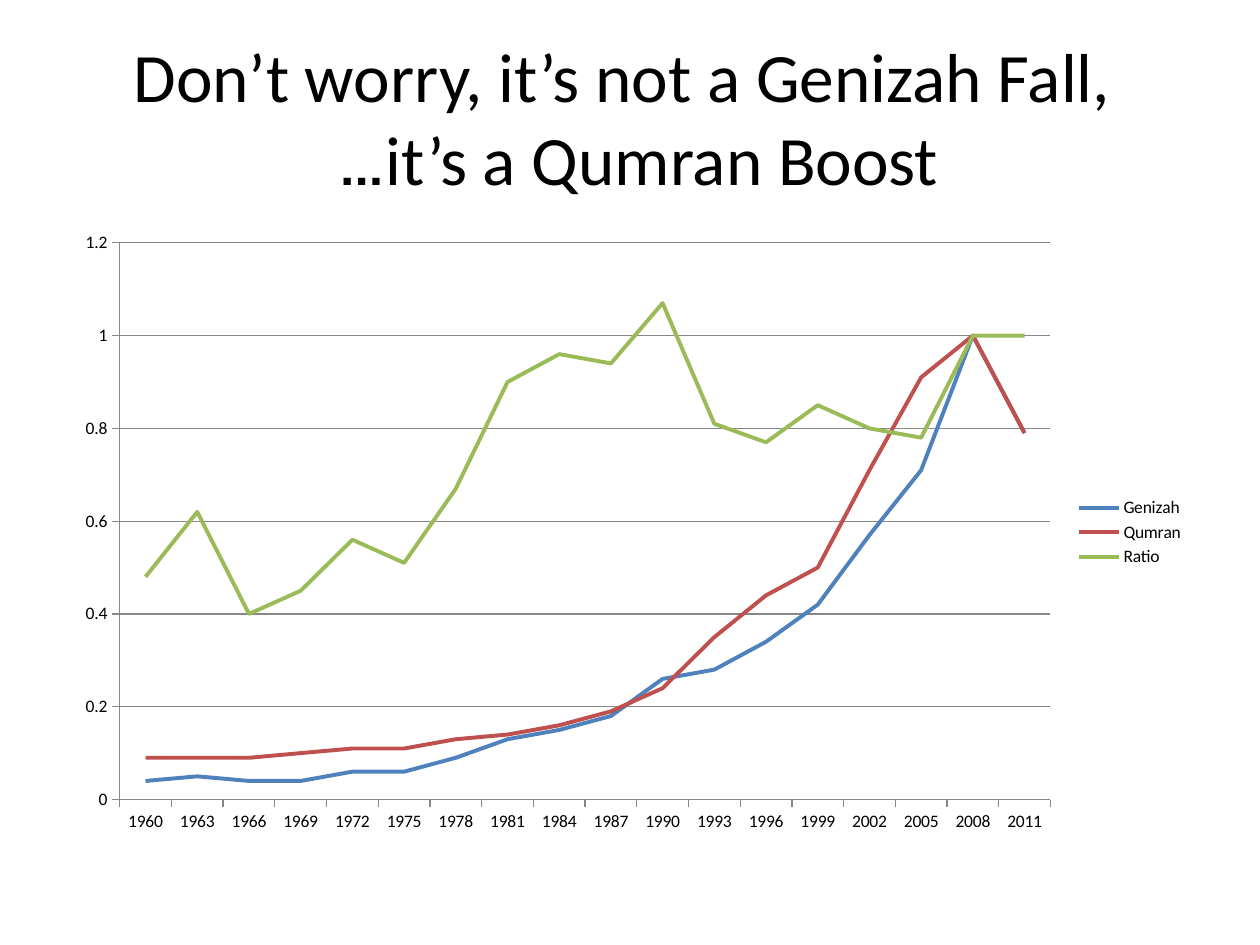
"""Build a slide with a line chart of Genizah, Qumran and their ratio."""
from dataclasses import dataclass

from pptx import Presentation
from pptx.chart import data as chart_data
from pptx.dml.color import RGBColor
from pptx.enum import chart as charts, text
from pptx.util import Inches, Pt


@dataclass(frozen=True)
class Theme:
    font: str = "Calibri"
    ink: str = "000000"
    grid: str = "878787"
    title_size: float = 39.6
    chart_size: float = 10
    series_width: float = 2.25
    grid_width: float = 0.75


@dataclass(frozen=True)
class Series:
    name: str
    color: str
    values: tuple[float, ...]


THEME = Theme()
YEARS = [str(year) for year in range(1960, 2012, 3)]
SERIES = (
    Series("Genizah", "4F81BD", (0.04, 0.05, 0.04, 0.04, 0.06, 0.06, 0.09, 0.13, 0.15,
                                 0.18, 0.26, 0.28, 0.34, 0.42, 0.57, 0.71, 1, 0.79)),
    Series("Qumran", "C0504D", (0.09, 0.09, 0.09, 0.1, 0.11, 0.11, 0.13, 0.14, 0.16,
                                0.19, 0.24, 0.35, 0.44, 0.5, 0.71, 0.91, 1, 0.79)),
    Series("Ratio", "9BBB59", (0.48, 0.62, 0.4, 0.45, 0.56, 0.51, 0.67, 0.9, 0.96,
                               0.94, 1.07, 0.81, 0.77, 0.85, 0.8, 0.78, 1, 1)),
)


def place(shape, left: float, top: float, width: float, height: float) -> None:
    shape.left, shape.top = Inches(left), Inches(top)
    shape.width, shape.height = Inches(width), Inches(height)


def format_font(font, size: float, color: str) -> None:
    font.name, font.size = THEME.font, Pt(size)
    font.color.rgb = RGBColor.from_string(color)


def format_line(line, color: str, width: float) -> None:
    line.color.rgb = RGBColor.from_string(color)
    line.width = Pt(width)


def write_text(shape, content: str, *, size: float, color: str,
               align=text.PP_ALIGN.CENTER, right_to_left: bool = False) -> None:
    frame = shape.text_frame
    frame.word_wrap = True
    frame.auto_size = text.MSO_AUTO_SIZE.NONE
    frame.vertical_anchor = text.MSO_ANCHOR.MIDDLE
    paragraph = frame.paragraphs[0]
    paragraph.text = content
    paragraph.alignment = align
    if right_to_left:
        paragraph._p.get_or_add_pPr().set("rtl", "1")
    format_font(paragraph.font, size, color)
    for run in paragraph.runs:
        format_font(run.font, size, color)


def format_axis(axis) -> None:
    axis.major_tick_mark = charts.XL_TICK_MARK.OUTSIDE
    axis.minor_tick_mark = charts.XL_TICK_MARK.NONE
    format_line(axis.format.line, THEME.grid, THEME.grid_width)


def add_line_chart(slide, series: tuple[Series, ...]) -> None:
    data = chart_data.CategoryChartData()
    data.categories = YEARS
    for item in series:
        data.add_series(item.name, item.values)
    chart = slide.shapes.add_chart(
        charts.XL_CHART_TYPE.LINE, Inches(0.5), Inches(1.75), Inches(9), Inches(4.95), data
    ).chart
    format_font(chart.font, THEME.chart_size, THEME.ink)
    chart.has_title = False
    chart.has_legend = True
    chart.legend.position = charts.XL_LEGEND_POSITION.RIGHT
    chart.legend.include_in_layout = False

    format_axis(chart.category_axis)
    value_axis = chart.value_axis
    format_axis(value_axis)
    value_axis.minimum_scale, value_axis.maximum_scale, value_axis.major_unit = 0, 1.2, 0.2
    value_axis.has_major_gridlines = True
    format_line(value_axis.major_gridlines.format.line, THEME.grid, THEME.grid_width)

    plot = chart.plots[0]
    plot.vary_by_categories = False
    for item, line in zip(series, plot.series):
        line.smooth = False
        line.marker.style = charts.XL_MARKER_STYLE.NONE
        format_line(line.format.line, item.color, THEME.series_width)


def main() -> None:
    presentation = Presentation()
    presentation.slide_width, presentation.slide_height = Inches(10), Inches(7.5)
    slide = presentation.slides.add_slide(presentation.slide_layouts[5])
    title = slide.shapes.title
    place(title, 0.5, 0.3, 9, 1.25)
    write_text(title, "Don’t worry, it’s not a Genizah Fall, \vit’s a Qumran Boost… ",
               size=THEME.title_size, color=THEME.ink, right_to_left=True)
    add_line_chart(slide, SERIES)
    presentation.save("out.pptx")


if __name__ == "__main__":
    main()
